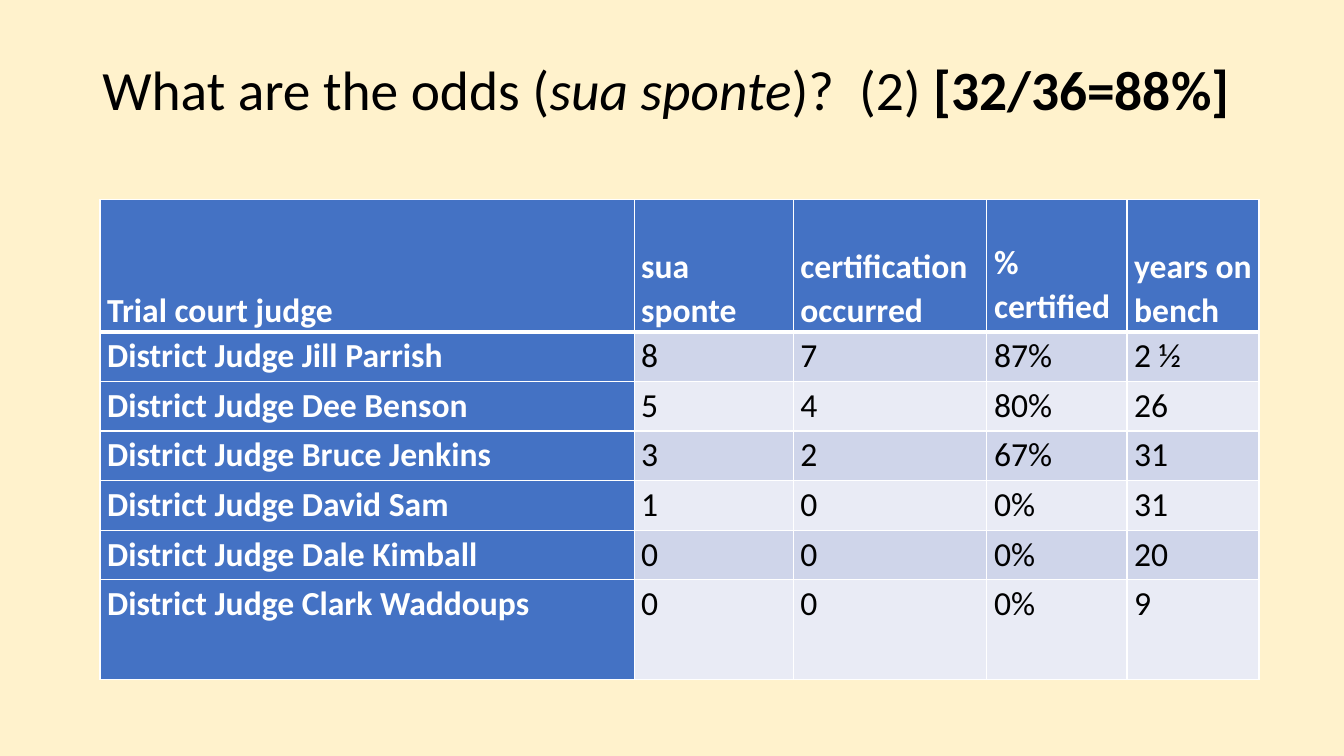
from lxml import etree
from pptx import Presentation
from pptx.dml.color import RGBColor
from pptx.enum.text import MSO_ANCHOR
from pptx.oxml.ns import qn
from pptx.util import Cm, Pt

TOP, MIDDLE, BOTTOM = MSO_ANCHOR.TOP, MSO_ANCHOR.MIDDLE, MSO_ANCHOR.BOTTOM

HEADINGS = ["Trial court judge", "sua sponte", "certification occurred",
            "% certified", "years on bench"]
JUDGES = [
    ["District Judge Jill Parrish", "8", "7", "87%", "2 ½"],
    ["District Judge Dee Benson", "5", "4", "80%", "26"],
    ["District Judge Bruce Jenkins", "3", "2", "67%", "31"],
    ["District Judge David Sam", "1", "0", "0%", "31"],
    ["District Judge Dale Kimball", "0", "0", "0%", "20"],
    ["District Judge Clark Waddoups", "0", "0", "0%", "9"],
]
COLUMN_WIDTHS = [13.46, 4.01, 4.88, 3.53, 3.33]
ROW_HEIGHTS = [3.33] + [1.25] * 5 + [2.51]


def color(value):
    """Turn a hex string into a colour."""
    return RGBColor.from_string(value)


def add_text(paragraph, text, font="Calibri", size=24, ink="000000",
             bold=False, italic=False, spacing=1.07):
    """Append a formatted run to a paragraph."""
    paragraph.line_spacing = spacing
    run = paragraph.add_run()
    run.text = text
    run.font.name = font
    run.font.size = Pt(size)
    run.font.color.rgb = color(ink)
    run.font.bold = bold
    run.font.italic = italic


class OddsSlide:
    """Draw the elements of the slide in one style."""

    accent, white = "4472C4", "FFFFFF"
    bands = ["CFD5EA", "E9EBF5"]

    def __init__(self, slide, background):
        """Keep the slide and paint its background."""
        self.slide = slide
        slide.background.fill.solid()
        slide.background.fill.fore_color.rgb = color(background)

    def title(self, left, top, width, height, parts):
        """Add the heading from parts with their own formats."""
        heading = self.slide.shapes.add_textbox(
            Cm(left), Cm(top), Cm(width), Cm(height)).text_frame
        heading.word_wrap = True
        heading.vertical_anchor = MIDDLE
        for text, style in parts:
            add_text(heading.paragraphs[0], text, size=39.6, spacing=0.9, **style)

    def borders(self, cell, **widths):
        """Draw white lines on the cell sides, in points."""
        properties = cell._tc.get_or_add_tcPr()
        for side in "LRTB":
            line = etree.SubElement(properties, qn(f"a:ln{side}"),
                                    w=str(Pt(widths.get(side, 1))))
            fill = etree.SubElement(line, qn("a:solidFill"))
            etree.SubElement(fill, qn("a:srgbClr"), val=self.white)

    def cell(self, cell, text, row, column):
        """Fill one table cell according to its place."""
        label = row == 0 or column == 0
        self.borders(cell, T=3 if row == 1 else 1, B=3 if row == 0 else 1)
        cell.fill.solid()
        cell.fill.fore_color.rgb = color(
            self.accent if label else self.bands[(row - 1) % 2])
        cell.margin_left = cell.margin_right = Cm(0.18)
        cell.margin_top = Cm(0.03)
        cell.margin_bottom = Cm(0.1 if text == "% certified" else 0)
        cell.vertical_anchor = BOTTOM if row == 0 else TOP
        add_text(cell.text_frame.paragraphs[0], text, bold=label,
                 ink=self.white if label else "000000")

    def table(self, left, top, widths, heights, rows):
        """Add the table with headings in the first row and column."""
        grid = self.slide.shapes.add_table(
            len(heights), len(widths), Cm(left), Cm(top),
            Cm(sum(widths)), Cm(sum(heights))).table
        grid.first_col = True
        for column, width in zip(grid.columns, widths):
            column.width = Cm(width)
        for row, height in zip(grid.rows, heights):
            row.height = Cm(height)
        for r, texts in enumerate(rows):
            for c, text in enumerate(texts):
                self.cell(grid.cell(r, c), text, r, c)


def main():
    """Build and save the presentation."""
    deck = Presentation()
    deck.slide_width, deck.slide_height = Cm(33.87), Cm(19.05)
    odds = OddsSlide(deck.slides.add_slide(deck.slide_layouts[6]), "FFF2CC")
    odds.title(2.33, 1.01, 29.85, 2.65, [
        ("What are the odds (", {}),
        ("sua sponte", {"italic": True}),
        (")?  (2) ", {}),
        ("[32/36=88%]", {"bold": True}),
    ])
    odds.table(2.52, 5.03, COLUMN_WIDTHS, ROW_HEIGHTS, [HEADINGS] + JUDGES)
    deck.save("out.pptx")


if __name__ == "__main__":
    main()
